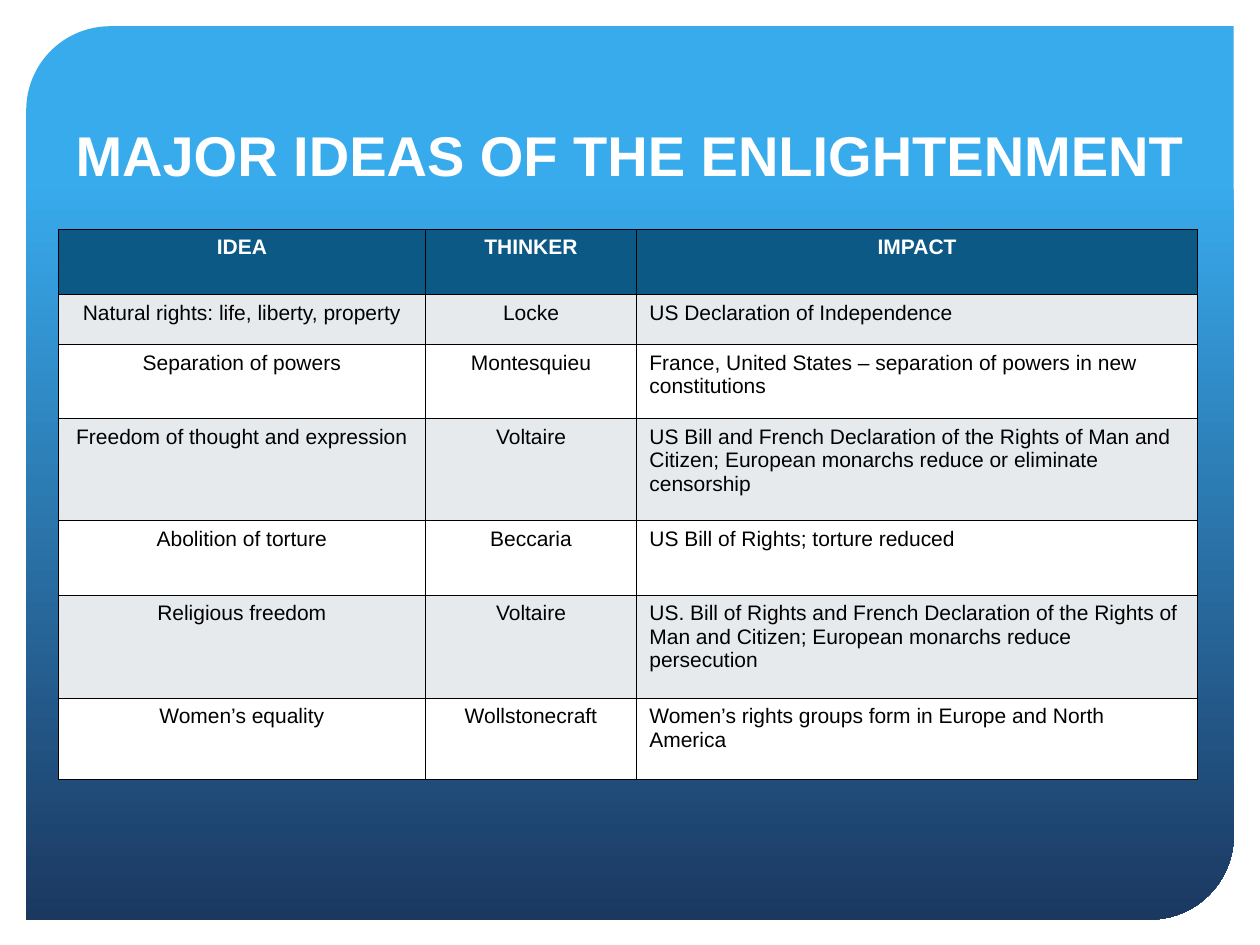
import pptx
import pptx.dml.color
import pptx.enum.shapes
import pptx.enum.text
import pptx.oxml
import pptx.oxml.ns
import pptx.util

Pt = pptx.util.Pt
ALIGN = pptx.enum.text.PP_ALIGN

COLORS = {
    "sky": "38ABED",
    "navy": "1B3861",
    "header": "0C5986",
    "band": "E7EAED",
    "white": "FFFFFF",
    "black": "000000",
}
COLUMN_WIDTHS = [209.5, 120.9, 320.4]
ROW_HEIGHTS = [37.5, 28.5, 42.4, 58.3, 42.5, 59.1, 46.2]
IDEAS = [
    ("IDEA", "THINKER", "IMPACT"),
    ("Natural rights: life, liberty, property", "Locke",
     "US Declaration of Independence"),
    ("Separation of powers", "Montesquieu",
     "France, United States – separation of powers in new constitutions"),
    ("Freedom of thought and expression", "Voltaire",
     "US Bill and French Declaration of the Rights of Man and Citizen; "
     "European monarchs reduce or eliminate censorship"),
    ("Abolition of torture", "Beccaria",
     "US Bill of Rights; torture reduced"),
    ("Religious freedom", "Voltaire",
     "US. Bill of Rights and French Declaration of the Rights of Man and "
     "Citizen; European monarchs reduce persecution"),
    ("Women’s equality", "Wollstonecraft",
     "Women’s rights groups form in Europe and North America"),
]


def rgb(name):
    return pptx.dml.color.RGBColor.from_string(COLORS[name])


def write_text(tf, text, size=12, color="black", bold=False, align=ALIGN.CENTER):
    tf.word_wrap = True
    p = tf.paragraphs[0]
    p.alignment = align
    r = p.add_run()
    r.text = text
    r.font.name = "Arial"
    r.font.size = Pt(size)
    r.font.bold = bold
    r.font.color.rgb = rgb(color)


def add_panel(s):
    """Add the gradient backdrop with two opposite rounded corners."""
    sp = s.shapes.add_shape(
        pptx.enum.shapes.MSO_SHAPE.ROUND_2_DIAG_RECTANGLE,
        Pt(15), Pt(15), Pt(690), Pt(510.5))
    sp.adjustments[0] = 0.094
    sp.adjustments[1] = 0
    sp.shadow.inherit = False
    sp.line.fill.background()
    sp.fill.gradient()
    sp.fill.gradient_angle = 270
    stops = [(0.17, "sky"), (1, "navy")]
    for stop, (position, color) in zip(sp.fill.gradient_stops, stops):
        stop.position = position
        stop.color.rgb = rgb(color)


def add_title(s, text):
    tf = s.shapes.add_textbox(Pt(15), Pt(38), Pt(690), Pt(73)).text_frame
    tf.vertical_anchor = pptx.enum.text.MSO_ANCHOR.BOTTOM
    write_text(tf, text, size=32, color="white", bold=True)


def set_borders(cell, color="black", width=0.5):
    """Draw all four sides; the lines must come before the cell's fill."""
    tc_pr = cell._tc.get_or_add_tcPr()
    for i, side in enumerate(("lnL", "lnR", "lnT", "lnB")):
        tc_pr.insert(i, pptx.oxml.parse_xml(
            f'<a:{side} {pptx.oxml.ns.nsdecls("a")} w="{Pt(width)}">'
            f'<a:solidFill><a:srgbClr val="{COLORS[color]}"/></a:solidFill>'
            f'</a:{side}>'))


def add_ideas_table(s):
    table = s.shapes.add_table(
        len(IDEAS), len(COLUMN_WIDTHS), Pt(33.5), Pt(131),
        Pt(sum(COLUMN_WIDTHS)), Pt(sum(ROW_HEIGHTS))).table
    for column, width in zip(table.columns, COLUMN_WIDTHS):
        column.width = Pt(width)
    for i, (row, height, texts) in enumerate(zip(table.rows, ROW_HEIGHTS, IDEAS)):
        row.height = Pt(height)
        header = i == 0
        fill = "header" if header else "band" if i % 2 else "white"
        for j, (cell, text) in enumerate(zip(row.cells, texts)):
            cell.fill.solid()
            cell.fill.fore_color.rgb = rgb(fill)
            set_borders(cell)
            write_text(cell.text_frame, text, bold=header,
                       color="white" if header else "black",
                       align=ALIGN.CENTER if header or j < 2 else ALIGN.LEFT)


def main():
    prs = pptx.Presentation()
    prs.slide_width, prs.slide_height = Pt(720), Pt(540)
    s = prs.slides.add_slide(prs.slide_layouts[6])
    add_panel(s)
    add_title(s, "MAJOR IDEAS OF THE ENLIGHTENMENT")
    add_ideas_table(s)
    prs.save("out.pptx")


if __name__ == "__main__":
    main()
